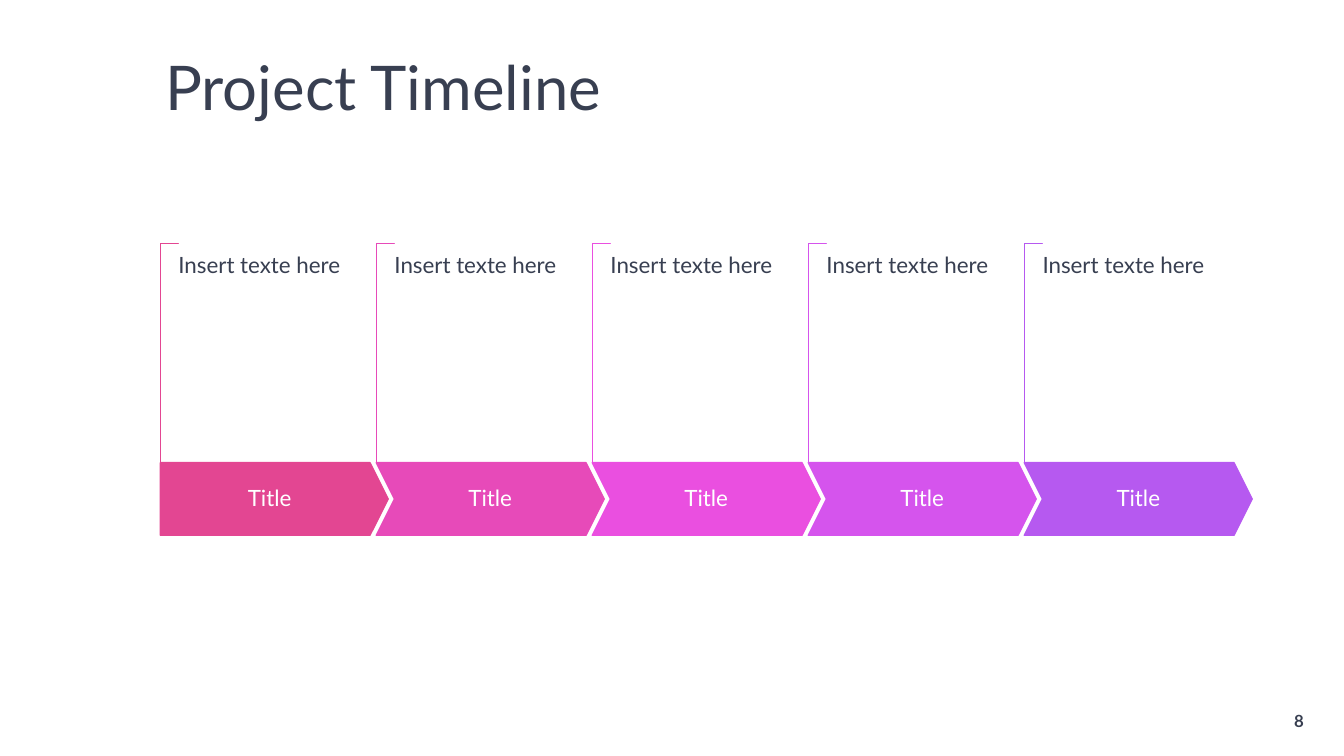
from dataclasses import dataclass

from pptx import Presentation
from pptx.dml.color import RGBColor
from pptx.enum.shapes import MSO_SHAPE
from pptx.enum.text import MSO_ANCHOR, MSO_AUTO_SIZE, PP_ALIGN
from pptx.shapes.autoshape import Shape
from pptx.shapes.shapetree import GroupShapes
from pptx.text.text import TextFrame
from pptx.util import Inches, Pt

CORNER = MSO_SHAPE.CORNER
PENTAGON = MSO_SHAPE.PENTAGON
CHEVRON = MSO_SHAPE.CHEVRON
TOP, MIDDLE = MSO_ANCHOR.TOP, MSO_ANCHOR.MIDDLE
LEFT, CENTER, RIGHT = PP_ALIGN.LEFT, PP_ALIGN.CENTER, PP_ALIGN.RIGHT
NO_AUTOFIT = MSO_AUTO_SIZE.NONE

FONT = "Lato"
DARK = "383F51"
WHITE = "FFFFFF"

FIRST_LEFT = 1.59
LAST_LEFT = 10.16
ARROW_TOP = 4.59
ARROW_WIDTH = 2.26
ARROW_HEIGHT = 0.72
NOTCH = 0.18
BRACKET_LENGTH = 2.17
BRACKET_DEPTH = 0.18
BRACKET_CENTER_Y = 3.5


@dataclass(frozen=True)
class Box:
    left: float
    top: float
    width: float
    height: float


@dataclass(frozen=True)
class Phase:
    title: str
    description: str
    color: str


PHASES = [
    Phase("Title", "Insert texte here", color)
    for color in ("E34692", "E74AB9", "EA4FE0", "D554ED", "B659F0")
]
PITCH = (LAST_LEFT - FIRST_LEFT) / (len(PHASES) - 1)


def rgb(color: str) -> RGBColor:
    return RGBColor.from_string(color)


def inches(box: Box) -> tuple[Inches, ...]:
    return tuple(Inches(v) for v in (box.left, box.top, box.width, box.height))


def write(frame: TextFrame, text: str, size: float, color: str,
          align: PP_ALIGN, anchor: MSO_ANCHOR,
          insets: tuple[float, float] = (0.1, 0.05),
          line_spacing: float = 0.9, bold: bool = False) -> None:
    frame.word_wrap = True
    frame.auto_size = NO_AUTOFIT
    frame.vertical_anchor = anchor
    frame.margin_left = frame.margin_right = Inches(insets[0])
    frame.margin_top = frame.margin_bottom = Inches(insets[1])
    paragraph = frame.paragraphs[0]
    paragraph.text = text
    paragraph.alignment = align
    paragraph.line_spacing = line_spacing
    paragraph.font.name = FONT
    paragraph.font.size = Pt(size)
    paragraph.font.bold = bold
    paragraph.font.color.rgb = rgb(color)


def add_outlined(shapes: GroupShapes, kind: MSO_SHAPE, box: Box, fill: str,
                 line: str, adjustments: list[float]) -> Shape:
    shape = shapes.add_shape(kind, *inches(box))
    shape.shadow.inherit = False
    shape.fill.solid()
    shape.fill.fore_color.rgb = rgb(fill)
    shape.line.color.rgb = rgb(line)
    shape.line.width = Pt(1)
    for index, value in enumerate(adjustments):
        shape.adjustments[index] = value
    return shape


def add_phase(shapes: GroupShapes, phase: Phase, index: int) -> None:
    left = FIRST_LEFT + index * PITCH
    first = index == 0

    bracket_box = Box(left + (BRACKET_DEPTH - BRACKET_LENGTH) / 2,
                      BRACKET_CENTER_Y - BRACKET_DEPTH / 2,
                      BRACKET_LENGTH, BRACKET_DEPTH)
    bracket = add_outlined(shapes, CORNER, bracket_box, WHITE, phase.color,
                           [0.01, 0.01])
    bracket.rotation = 90

    arrow_box = Box(left, ARROW_TOP, ARROW_WIDTH, ARROW_HEIGHT)
    add_outlined(shapes, PENTAGON if first else CHEVRON, arrow_box,
                 phase.color, phase.color, [0.25])

    title_left = left if first else left + NOTCH
    title_right = left + ARROW_WIDTH - (NOTCH / 2 if first else NOTCH)
    title_box = Box(title_left, ARROW_TOP, title_right - title_left, ARROW_HEIGHT)
    title = shapes.add_textbox(*inches(title_box))
    write(title.text_frame, phase.title, 16, WHITE, CENTER, MIDDLE, (0.11, 0.22))

    description = shapes.add_textbox(*inches(Box(left + NOTCH, 2.52, 1.83, 1.55)))
    write(description.text_frame, phase.description, 16, DARK, LEFT, TOP, (0, 0))


def main() -> None:
    presentation = Presentation()
    presentation.slide_width = Inches(13.33)
    presentation.slide_height = Inches(7.5)
    slide = presentation.slides.add_slide(presentation.slide_layouts[5])
    slide.background.fill.solid()
    slide.background.fill.fore_color.rgb = rgb(WHITE)

    title = slide.shapes.title
    title.left, title.top, title.width, title.height = inches(
        Box(1.54, 0.17, 10.88, 1.45))
    write(title.text_frame, "Project Timeline", 44, DARK, LEFT, MIDDLE)

    timeline = slide.shapes.add_group_shape()
    for index, phase in enumerate(PHASES):
        add_phase(timeline.shapes, phase, index)

    page_number = slide.shapes.add_textbox(*inches(Box(10.03, 6.95, 3, 0.4)))
    write(page_number.text_frame, "8", 12, DARK, RIGHT, MIDDLE,
          line_spacing=1.0, bold=True)

    presentation.save("out.pptx")


if __name__ == "__main__":
    main()
